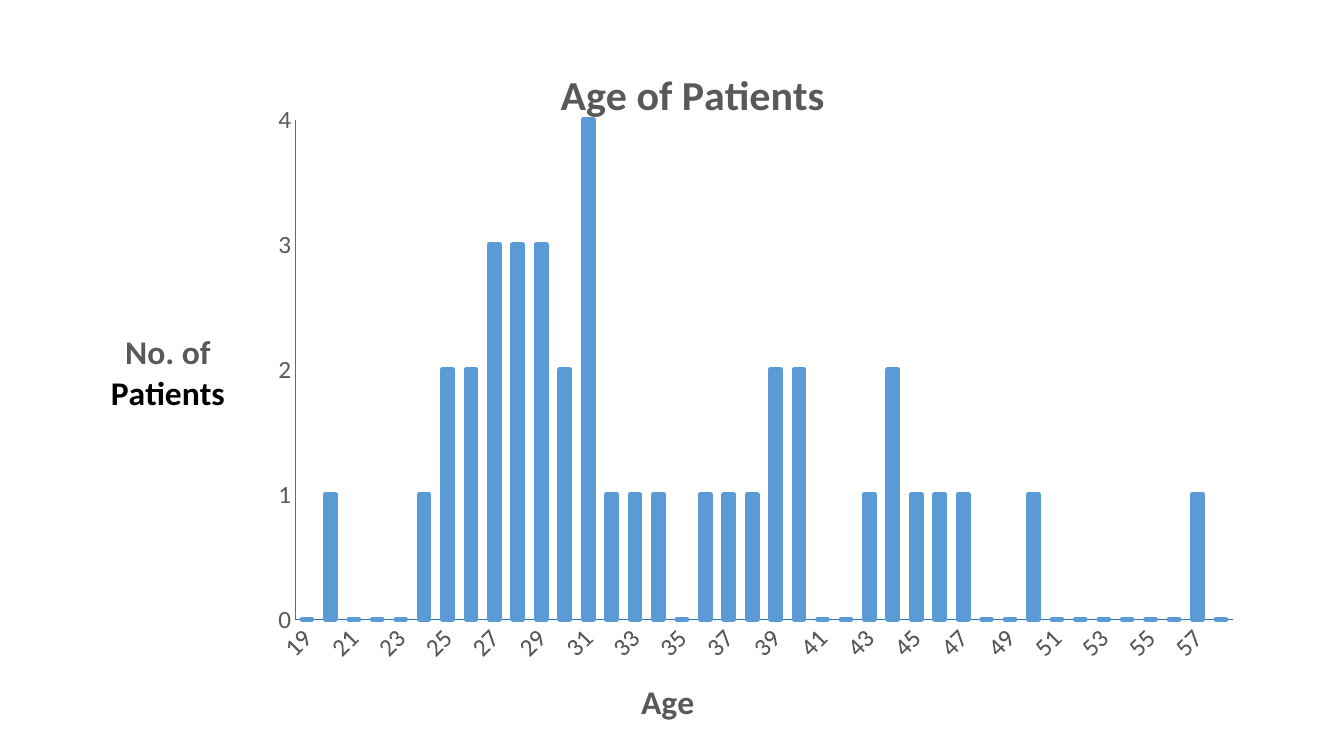
import pptx
import pptx.chart.data
import pptx.dml.color
import pptx.enum.chart
import pptx.enum.text
import pptx.oxml
import pptx.oxml.ns
import pptx.util

WIDTH, HEIGHT = 13.33, 7.5
FONT = "Calibri"
GREY, BLACK, WHITE = "595959", "000000", "FFFFFF"
BAR_BLUE, AXIS_BLUE = "5B9BD5", "2E75B6"

FIRST_AGE = 19
PATIENTS = [0, 1, 0, 0, 0, 1, 2, 2, 3, 3,
            3, 2, 4, 1, 1, 1, 0, 1, 1, 1,
            2, 2, 0, 0, 1, 2, 1, 1, 1, 0,
            0, 1, 0, 0, 0, 0, 0, 0, 1, 0]


def rgb(color):
    return pptx.dml.color.RGBColor.from_string(color)


def style_font(font, size, color, bold=False):
    font.name, font.size, font.bold = FONT, pptx.util.Pt(size), bold
    font.color.rgb = rgb(color)


def style_line(line, color, width):
    line.color.rgb = rgb(color)
    line.width = pptx.util.Pt(width)


def layout_xml(x, y, w=None, h=None):
    """Manual layout in shares of the chart; with a size it is the inner plot."""
    parts = ['<c:layoutTarget val="inner"/>'] if w else []
    parts += ['<c:xMode val="edge"/><c:yMode val="edge"/>',
              f'<c:x val="{x}"/><c:y val="{y}"/>']
    if w:
        parts.append(f'<c:w val="{w}"/><c:h val="{h}"/>')
    ns = pptx.oxml.ns.nsdecls("c")
    return pptx.oxml.parse_xml(
        f'<c:layout {ns}><c:manualLayout>{"".join(parts)}</c:manualLayout></c:layout>')


def place(element, layout, index):
    for old in element.findall(pptx.oxml.ns.qn("c:layout")):
        element.remove(old)
    element.insert(index, layout)


def add_title(owner, lines, size, x, y):
    """Title of a chart or an axis; lines are (text, colour) pairs."""
    title = owner.chart_title if hasattr(owner, "chart_title") else owner.axis_title
    tf = title.text_frame
    for i, (text, color) in enumerate(lines):
        p = tf.paragraphs[0] if i == 0 else tf.add_paragraph()
        p.alignment = pptx.enum.text.PP_ALIGN.CENTER
        r = p.add_run()
        r.text = text
        style_font(r.font, size, color, bold=True)
    body = tf._txBody.find(pptx.oxml.ns.qn("a:bodyPr"))
    body.set("rot", "0")
    body.set("vert", "horz")
    place(title._element, layout_xml(x, y), 1)


def style_axis(axis):
    axis.has_major_gridlines = False
    axis.major_tick_mark = axis.minor_tick_mark = pptx.enum.chart.XL_TICK_MARK.NONE
    style_font(axis.tick_labels.font, 18, GREY)
    style_line(axis.format.line, AXIS_BLUE, 0.75)


def add_histogram(s, x, y, w, h):
    data = pptx.chart.data.CategoryChartData()
    data.categories = [str(FIRST_AGE + i) for i in range(len(PATIENTS))]
    data.add_series("Series 1", PATIENTS)
    frame = s.shapes.add_chart(
        pptx.enum.chart.XL_CHART_TYPE.COLUMN_CLUSTERED,
        *(pptx.util.Inches(v) for v in (x, y, w, h)), data)
    chart = frame.chart
    chart.has_legend = False
    style_font(chart.font, 10, BLACK)

    # Bars
    plot = chart.plots[0]
    plot.gap_width, plot.overlap, plot.vary_by_categories = 146, -27, False
    bars = plot.series[0].format
    bars.fill.solid()
    bars.fill.fore_color.rgb = rgb(BAR_BLUE)
    style_line(bars.line, BAR_BLUE, 3.75)

    # Axes
    ages, counts = chart.category_axis, chart.value_axis
    for axis in (ages, counts):
        style_axis(axis)
    counts.minimum_scale, counts.maximum_scale, counts.major_unit = 0, 4, 1
    counts.tick_labels.number_format = "0"
    counts.tick_labels.number_format_is_linked = False
    ages._element.txPr.find(pptx.oxml.ns.qn("a:bodyPr")).set("rot", "-2700000")

    # Titles and plot area
    add_title(chart, [("Age of Patients", GREY)], 30, 0.41, 0.02)
    add_title(ages, [("Age", GREY)], 24, 0.48, 0.93)
    add_title(counts, [("No. of", GREY), ("Patients", BLACK)], 24, 0.03, 0.42)
    place(chart._chartSpace.chart.plotArea, layout_xml(0.19, 0.11, 0.8, 0.74), 0)


def main():
    prs = pptx.Presentation()
    prs.slide_width = pptx.util.Inches(WIDTH)
    prs.slide_height = pptx.util.Inches(HEIGHT)
    s = prs.slides.add_slide(prs.slide_layouts[6])
    s.background.fill.solid()
    s.background.fill.fore_color.rgb = rgb(WHITE)
    add_histogram(s, 0.054 * WIDTH, 0.06 * HEIGHT, 0.872 * WIDTH, 0.91 * HEIGHT)
    prs.save("out.pptx")


if __name__ == "__main__":
    main()
